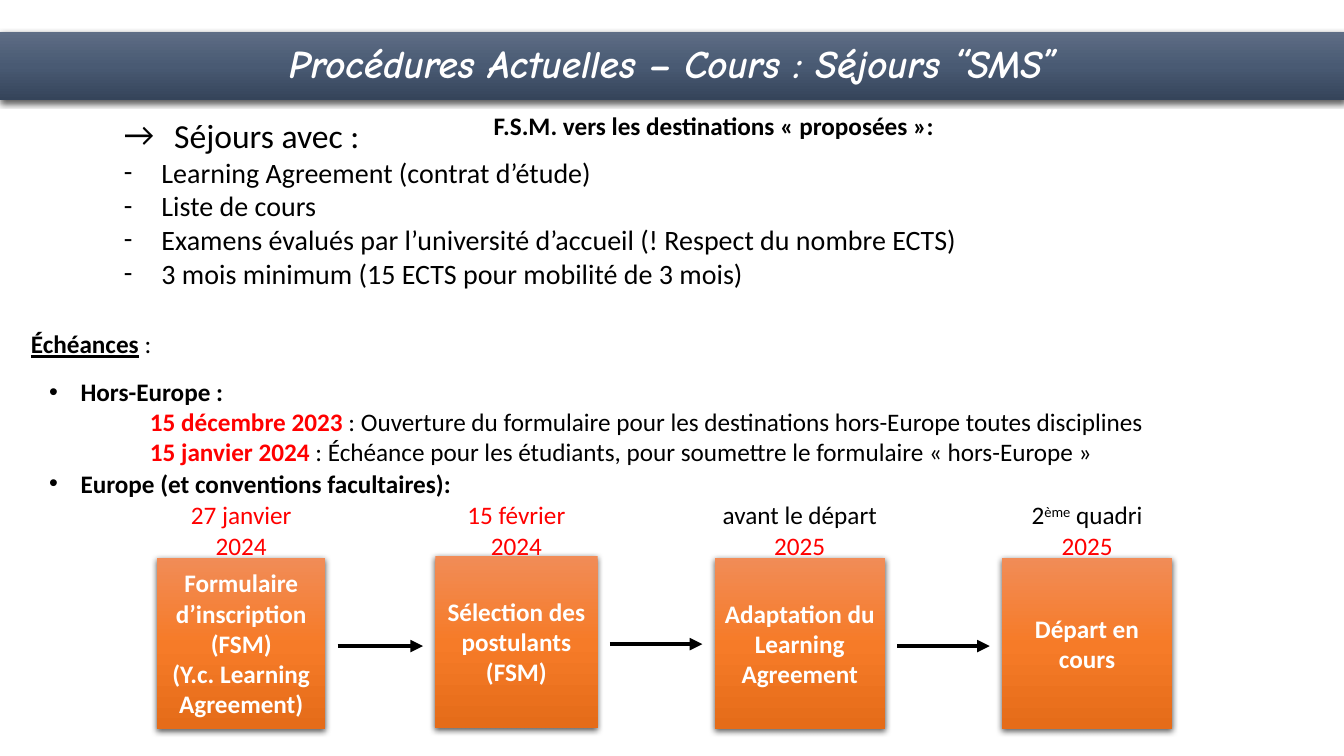
import copy

import lxml.etree
import pptx
import pptx.dml.color
import pptx.enum.shapes
import pptx.enum.text
import pptx.oxml.ns
import pptx.util

Cm = pptx.util.Cm
Pt = pptx.util.Pt
RGBColor = pptx.dml.color.RGBColor
PP_ALIGN = pptx.enum.text.PP_ALIGN
MSO_ANCHOR = pptx.enum.text.MSO_ANCHOR

BLACK = RGBColor(0x00, 0x00, 0x00)
WHITE = RGBColor(0xFF, 0xFF, 0xFF)
RED = RGBColor(0xFF, 0x00, 0x00)
SLATE = [RGBColor(0x5E, 0x6D, 0x85), RGBColor(0x49, 0x5A, 0x73), RGBColor(0x35, 0x44, 0x5A)]
ORANGE = [RGBColor(0xF1, 0x8C, 0x57), RGBColor(0xF6, 0x7B, 0x28), RGBColor(0xE5, 0x6C, 0x19)]

BOLD = {"bold": True}
RED_TEXT = {"color": RED}
RED_BOLD = {"color": RED, "bold": True}
CENTER = {"alignment": PP_ALIGN.CENTER}


def add_xml(parent, tag, **attributes):
    child = lxml.etree.SubElement(parent, pptx.oxml.ns.qn(tag))
    for name, value in attributes.items():
        child.set(name, str(value))
    return child


class SlideBuilder:
    font_name = "Calibri"
    font_size = 18

    def __init__(self, slide):
        self.slide = slide

    def fill_text(self, shape, paragraphs, style=None, anchor=MSO_ANCHOR.TOP, inset=(0.25, 0.13)):
        """Fill a shape with (runs, layout) paragraphs; a run is (text, style)."""
        frame = shape.text_frame
        horizontal, vertical = map(Cm, inset)
        settings = {"word_wrap": True, "vertical_anchor": anchor,
                    "margin_left": horizontal, "margin_right": horizontal,
                    "margin_top": vertical, "margin_bottom": vertical}
        for name, value in settings.items():
            setattr(frame, name, value)
        for index, (runs, layout) in enumerate(paragraphs):
            paragraph = frame.add_paragraph() if index else frame.paragraphs[0]
            self.lay_out(paragraph, {"alignment": PP_ALIGN.LEFT, **layout})
            for text, run_style in runs:
                self.add_run(paragraph, text, {**(style or {}), **run_style})

    def lay_out(self, paragraph, layout):
        layout = dict(layout)
        bullet, indent = layout.pop("bullet", None), layout.pop("indent", 0)
        for name, value in layout.items():
            setattr(paragraph, name, value)
        properties = paragraph._p.get_or_add_pPr()
        properties.set("marL", str(Cm(indent)))
        properties.set("indent", str(-Cm(indent) if bullet else 0))
        if bullet:
            add_xml(properties, "a:buFont", typeface="Arial" if bullet == "•" else self.font_name)
            add_xml(properties, "a:buChar", char=bullet)

    def add_run(self, paragraph, text, style):
        style = {"name": self.font_name, "size": self.font_size, "color": BLACK, **style}
        run = paragraph.add_run()
        run.text = text
        run.font.color.rgb = style.pop("color")
        run.font.size = Pt(style.pop("size"))
        if style.pop("superscript", False):
            run._r.get_or_add_rPr().set("baseline", "30000")
        for name, value in style.items():
            setattr(run.font, name, value)

    def text_box(self, left, top, width, height, paragraphs):
        shape = self.slide.shapes.add_textbox(*map(Cm, (left, top, width, height)))
        self.fill_text(shape, paragraphs)

    def panel(self, left, top, width, height, colors, paragraphs, **text_options):
        """Rectangle with a vertical three-colour gradient and a soft shadow."""
        shape = self.slide.shapes.add_shape(
            pptx.enum.shapes.MSO_SHAPE.RECTANGLE, *map(Cm, (left, top, width, height)))
        shape.fill.gradient()
        shape.fill.gradient_angle = 270
        stop_list = shape._element.spPr.find(".//" + pptx.oxml.ns.qn("a:gsLst"))
        stop_list.append(copy.deepcopy(stop_list[0]))
        for stop, position, color in zip(shape.fill.gradient_stops, (0, 0.5, 1), colors):
            stop.position = position
            stop.color.rgb = color
        shape.line.fill.background()
        shape.shadow.inherit = False
        effects = shape._element.spPr.find(pptx.oxml.ns.qn("a:effectLst"))
        shadow = add_xml(effects, "a:outerShdw", blurRad=Pt(4.5), dist=Pt(1.5),
                         dir=5400000, algn="ctr", rotWithShape=0)
        add_xml(add_xml(shadow, "a:srgbClr", val=BLACK), "a:alpha", val=63000)
        self.fill_text(shape, paragraphs, **text_options)

    def arrow(self, start, end, y):
        connector = self.slide.shapes.add_connector(
            pptx.enum.shapes.MSO_CONNECTOR.STRAIGHT, *map(Cm, (start, y, end, y)))
        connector.line.color.rgb = BLACK
        connector.line.width = Pt(3)
        add_xml(connector.line._get_or_add_ln(), "a:tailEnd", type="triangle")
        add_xml(connector._element.spPr, "a:effectLst")


# left, top, width, height, box lines, label width, label paragraphs
STEPS = [
    (3.96, 14.05, 4.24, 4.32, ["Formulaire d’inscription (FSM)", "(Y.c. Learning Agreement)"],
     3.89, [[("27 janvier", RED_TEXT)], [("2024", RED_TEXT)]]),
    (10.97, 14, 4.09, 4.34, ["Sélection des postulants (FSM)"],
     3.48, [[("15 février", RED_TEXT)], [("2024", RED_TEXT)]]),
    (18.01, 14.05, 4.29, 4.32, ["Adaptation du Learning Agreement"],
     5.56, [[("avant le départ ", {}), ("2025", RED_TEXT)]]),
    (25.25, 14.05, 4.29, 4.32, ["Départ en cours"],
     3.45, [[("2", {}), ("ème", {"superscript": True}), (" quadri", {})], [("2025", RED_TEXT)]]),
]
ARROW_GAP = 0.31
ARROW_DROP = 2.23

STAY_CONDITIONS = [
    "Learning Agreement (contrat d’étude)",
    "Liste de cours",
    "Examens évalués par l’université d’accueil (! Respect du nombre ECTS)",
    "3 mois minimum (15 ECTS pour mobilité de 3 mois)",
]


def add_steps(builder):
    for left, top, width, height, lines, label_width, label in STEPS:
        builder.panel(left, top, width, height, ORANGE,
                      [([(line, {})], CENTER) for line in lines],
                      style={"color": WHITE, "bold": True}, anchor=MSO_ANCHOR.MIDDLE)
        builder.text_box(left + (width - label_width) / 2, 12.46, label_width, 1.8,
                         [(runs, CENTER) for runs in label])
    for step, following in zip(STEPS, STEPS[1:]):
        left, top, width = step[:3]
        builder.arrow(left + width + ARROW_GAP, following[0] - ARROW_GAP, top + ARROW_DROP)


def main():
    presentation = pptx.Presentation()
    presentation.slide_width, presentation.slide_height = Cm(33.87), Cm(19.05)
    builder = SlideBuilder(presentation.slides.add_slide(presentation.slide_layouts[6]))

    builder.panel(0, 0.8, 33.87, 1.72, SLATE,
                  [([("Procédures Actuelles – Cours : Séjours “SMS”", {})],
                    {**CENTER, "line_spacing": 0.93})],
                  style={"name": "Comic Neue", "size": 28, "color": WHITE,
                         "bold": True, "italic": True}, inset=(0.61, 0.3))

    conditions = [([(text, {"size": 20})], {"bullet": "-", "indent": 0.95})
                  for text in STAY_CONDITIONS]
    builder.text_box(2.87, 2.77, 24.54, 4.7, [
        ([("Séjours avec :", {"size": 24})], {"bullet": "→", "indent": 1.27}), *conditions])
    builder.text_box(12.19, 2.79, 17.09, 0.9, [
        ([("F.S.M. vers les destinations « proposées »:", BOLD)], {"line_spacing": 0.8})])

    builder.text_box(0.53, 8.15, 3.6, 1.02, [
        ([("Échéances", {"bold": True, "underline": True}), (" :", {})], {})])
    region, deadline = {"bullet": "•", "indent": 0.79}, {"indent": 2.54}
    builder.text_box(0.99, 9.35, 32.38, 2.57, [
        ([("Hors-Europe :", BOLD)], region),
        ([("15 décembre 2023", RED_BOLD),
          (" : Ouverture du formulaire pour les destinations hors-Europe toutes disciplines", {})],
         deadline),
        ([("15 janvier 2024", RED_BOLD),
          (" : Échéance pour les étudiants, pour soumettre le formulaire « hors-Europe »", {})],
         deadline)])
    builder.text_box(0.99, 11.66, 11.7, 1.02, [
        ([("Europe (et conventions facultaires):", BOLD)], region)])

    add_steps(builder)
    presentation.save("out.pptx")


if __name__ == "__main__":
    main()
